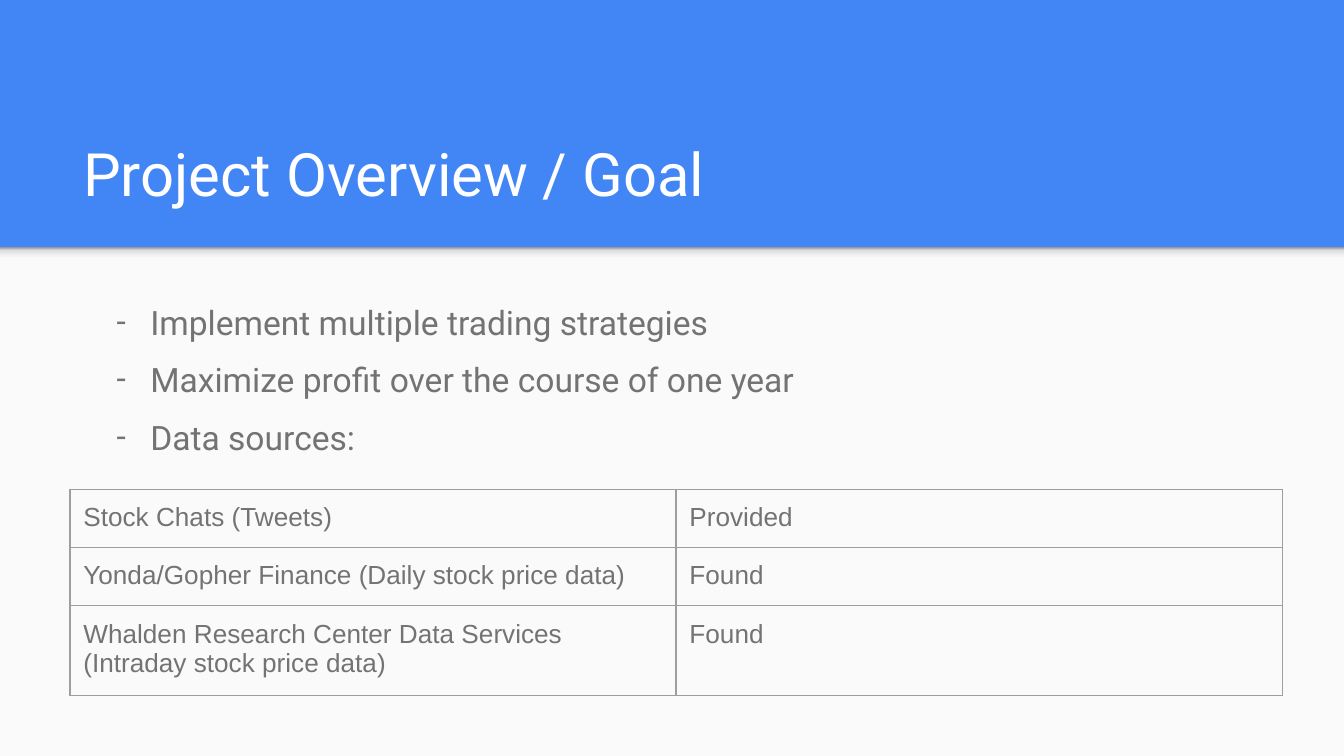
from lxml import etree
from pptx import Presentation
from pptx.dml.color import RGBColor
from pptx.enum.shapes import MSO_SHAPE
from pptx.enum.text import MSO_ANCHOR
from pptx.oxml.ns import qn
from pptx.util import Inches, Pt

RECT = MSO_SHAPE.RECTANGLE
TOP, BOTTOM = MSO_ANCHOR.TOP, MSO_ANCHOR.BOTTOM

TITLE = "Project Overview / Goal"
GOALS = [
    "Implement multiple trading strategies",
    "Maximize profit over the course of one year",
    "Data sources:",
]
SOURCES = [
    ("Stock Chats (Tweets)", "Provided"),
    ("Yonda/Gopher Finance (Daily stock price data)", "Found"),
    ("Whalden Research Center Data Services (Intraday stock price data)", "Found"),
]

BLUE, PAPER, WHITE, GREY, RULE = "4285F4", "FAFAFA", "FFFFFF", "737373", "9E9E9E"
SHADOW_STOPS = [(0, "F9F9F9"), (36, "F9F9F9"), (80, "DEDEDE"), (100, "999999")]

W = 10
H = W * 9 / 16
MARGIN, HEADER, TEXT_W = 0.52, 1.84, 8.99
COL_W, ROW_H, TABLE_TOP, TABLE_H = 4.51, 0.41, 3.64, 1.53
INSET = Inches(0.1)


def rgb(color):
    return RGBColor.from_string(color)


def add(parent, tag, **attrs):
    return etree.SubElement(parent, qn(tag), {k: str(v) for k, v in attrs.items()})


def add_rect(slide, x, y, w, h, color):
    sp = slide.shapes.add_shape(RECT, Inches(x), Inches(y), Inches(w), Inches(h))
    sp.shadow.inherit = False
    sp.fill.solid()
    sp.fill.fore_color.rgb = rgb(color)
    sp.line.fill.background()
    return sp


def fill_gradient(sp, stops):
    """Blend upwards through (percent, colour) stops."""
    sp.fill.gradient()
    sp.fill.gradient_angle = 90
    gs_list = sp.element.spPr.find(".//" + qn("a:gsLst"))
    for gs in list(gs_list):
        gs_list.remove(gs)
    for percent, color in stops:
        add(add(gs_list, "a:gs", pos=percent * 1000), "a:srgbClr", val=color)


def add_bullet(p, char, font, color):
    pPr = p._p.get_or_add_pPr()
    pPr.set("marL", str(Inches(0.5)))
    pPr.set("indent", str(-Inches(0.25)))
    add(add(pPr, "a:buClr"), "a:srgbClr", val=color)
    add(pPr, "a:buFont", typeface=font)
    add(pPr, "a:buChar", char=char)


def write(tf, lines, size, font="Roboto", color=GREY, bullet=None):
    for i, line in enumerate(lines):
        p = tf.add_paragraph() if i else tf.paragraphs[0]
        if bullet:
            p.line_spacing, p.space_after = 1.15, Pt(6)
            add_bullet(p, bullet, font, color)
        r = p.add_run()
        r.text = line
        r.font.size, r.font.name = Pt(size), font
        r.font.color.rgb = rgb(color)


def add_text(slide, y, h, lines, anchor=TOP, **style):
    tf = slide.shapes.add_textbox(Inches(MARGIN), Inches(y), Inches(TEXT_W), Inches(h)).text_frame
    tf.word_wrap = True
    tf.vertical_anchor = anchor
    tf.margin_left = tf.margin_right = tf.margin_top = tf.margin_bottom = INSET
    write(tf, lines, **style)


def style_cell(cell):
    cell.margin_left = cell.margin_right = cell.margin_top = cell.margin_bottom = INSET
    tcPr = cell._tc.get_or_add_tcPr()
    for side in ("a:lnL", "a:lnR", "a:lnT", "a:lnB"):
        ln = add(tcPr, side, w=Pt(0.75))
        add(add(ln, "a:solidFill"), "a:srgbClr", val=RULE)
    cell.fill.background()


def add_source_table(slide):
    n_cols = len(SOURCES[0])
    frame = slide.shapes.add_table(
        len(SOURCES), n_cols, Inches(MARGIN), Inches(TABLE_TOP),
        Inches(COL_W * n_cols), Inches(TABLE_H))
    table = frame.table
    table.first_row = table.horz_banding = False
    for col in table.columns:
        col.width = Inches(COL_W)
    for row, texts in zip(table.rows, SOURCES):
        row.height = Inches(ROW_H)
        for cell, text in zip(row.cells, texts):
            style_cell(cell)
            write(cell.text_frame, [text], size=14, font="Arial")
    frame.height = Inches(TABLE_H)


def main():
    prs = Presentation()
    prs.slide_width, prs.slide_height = Inches(W), Inches(H)
    slide = prs.slides.add_slide(prs.slide_layouts[6])
    slide.background.fill.solid()
    slide.background.fill.fore_color.rgb = rgb(BLUE)

    add_rect(slide, 0, HEADER, W, H - HEADER, PAPER)
    fill_gradient(add_rect(slide, 0, HEADER, W, 0.12, PAPER), SHADOW_STOPS)
    add_text(slide, 0.81, 0.84, [TITLE], anchor=BOTTOM, size=32, color=WHITE)
    add_text(slide, 2.1, 2.96, GOALS, size=18, bullet="-")
    add_source_table(slide)
    prs.save("out.pptx")


if __name__ == "__main__":
    main()
